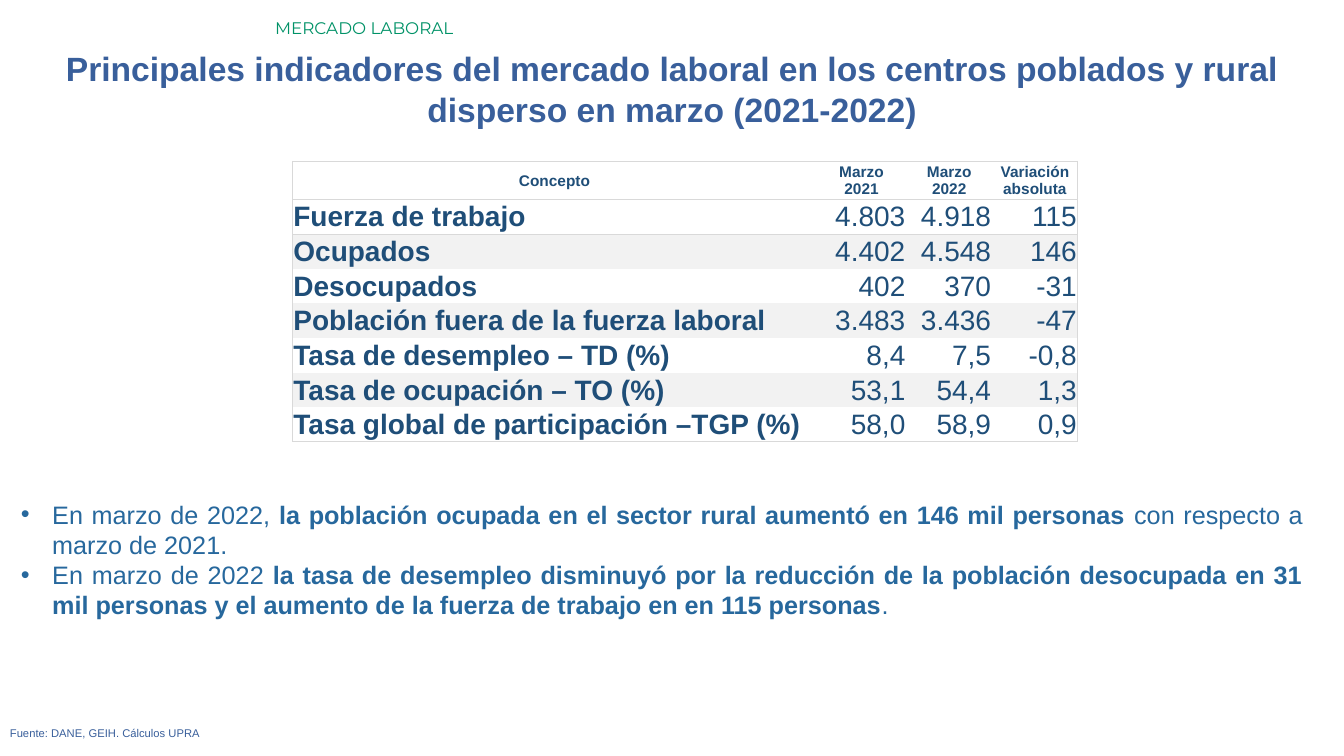
import pptx
import pptx.util
import pptx.dml.color
import pptx.enum.text
import pptx.oxml
import pptx.oxml.ns

WIDTH, HEIGHT = 13.33, 7.5
GREEN, BLUE, SKY, NAVY = "009267", "395F9B", "27689D", "1F4E78"
WHITE, BAND, BORDER = "FFFFFF", "F2F2F2", "D9D9D9"
ALIGN = pptx.enum.text.PP_ALIGN
ANCHOR = pptx.enum.text.MSO_ANCHOR

HEADINGS = ["Concepto", "Marzo\n2021", "Marzo\n2022", "Variación absoluta"]
INDICATORS = [
    ("Fuerza de trabajo", "4.803", "4.918", "115"),
    ("Ocupados", "4.402", "4.548", "146"),
    ("Desocupados", "402", "370", "-31"),
    ("Población fuera de la fuerza laboral", "3.483", "3.436", "-47"),
    ("Tasa de desempleo – TD (%)", "8,4", "7,5", "-0,8"),
    ("Tasa de ocupación – TO (%)", "53,1", "54,4", "1,3"),
    ("Tasa global de participación –TGP (%)", "58,0", "58,9", "0,9"),
]
FINDINGS = [
    [("En marzo de 2022, ", False),
     ("la población ocupada en el sector rural aumentó en 146 mil personas ", True),
     ("con respecto a marzo de 2021.", False)],
    [("En marzo de 2022", False),
     (" la tasa de desempleo disminuyó por la reducción de la población desocupada "
      "en 31 mil personas y el aumento de la fuerza de trabajo en en 115 personas", True),
     (".", False)],
]


def color(value):
    """Turn a hex string into a colour."""
    return pptx.dml.color.RGBColor.from_string(value)


def add_xml(parent, markup):
    """Append a DrawingML element to its parent."""
    namespace = pptx.oxml.ns.nsdecls("a")
    parent.append(pptx.oxml.parse_xml(markup.replace(" ", f" {namespace} ", 1)))


def write(para, text, size, shade, font="Arial", bold=False, align=ALIGN.LEFT):
    """Add a formatted run to a paragraph."""
    para.alignment = align
    span = para.add_run()
    span.text = text
    span.font.name, span.font.size, span.font.bold = font, pptx.util.Pt(size), bold
    span.font.color.rgb = color(shade)


class Page:
    """Holds the current slide and places elements by shares of its size."""

    def __init__(self, deck):
        """Open a title-only slide."""
        self.deck = deck
        self.slide = deck.slides.add_slide(deck.slide_layouts[5])

    def area(self, left, top, width, height):
        """Convert shares of the slide to lengths."""
        across, down = self.deck.slide_width, self.deck.slide_height
        return int(left * across), int(top * down), int(width * across), int(height * down)

    def title(self, text, place):
        """Place and format the title placeholder."""
        box = self.slide.shapes.title
        box.left, box.top, box.width, box.height = self.area(*place)
        box.text_frame.word_wrap = True
        box.text_frame.auto_size = pptx.enum.text.MSO_AUTO_SIZE.NONE
        box.text_frame.vertical_anchor = ANCHOR.TOP
        write(box.text_frame.paragraphs[0], text, 24, BLUE, bold=True, align=ALIGN.CENTER)

    def text(self, place):
        """Add a wrapping text box and return its frame."""
        frame = self.slide.shapes.add_textbox(*self.area(*place)).text_frame
        frame.word_wrap = True
        return frame

    def label(self, text, place, **style):
        """Add one line of text."""
        write(self.text(place).paragraphs[0], text, **style)

    def bullets(self, items, place):
        """Add a justified list with mixed bold runs."""
        frame = self.text(place)
        indent = pptx.util.Inches(0.31)
        for index, item in enumerate(items):
            para = frame.add_paragraph() if index else frame.paragraphs[0]
            properties = para._p.get_or_add_pPr()
            properties.set("marL", str(indent))
            properties.set("indent", str(-indent))
            add_xml(properties, '<a:buFont typeface="Arial"/>')
            add_xml(properties, '<a:buChar char="•"/>')
            for text, bold in item:
                write(para, text, 18, SKY, bold=bold, align=ALIGN.JUSTIFY)

    def table(self, rows, place, columns, heights):
        """Add a banded table with a thin outer frame."""
        grid = self.slide.shapes.add_table(len(rows), len(columns), *self.area(*place)).table
        for column, width in zip(grid.columns, columns):
            column.width = pptx.util.Inches(width)
        for row, height in zip(grid.rows, heights):
            row.height = pptx.util.Inches(height)
        last_row, last_column = len(rows) - 1, len(columns) - 1
        for down, values in enumerate(rows):
            for across, value in enumerate(values):
                edges = {"L": across == 0, "R": across == last_column,
                         "T": down <= 2, "B": down <= 1 or down == last_row}
                self.cell(grid.cell(down, across), value, down, across, edges)

    def cell(self, cell, value, down, across, edges):
        """Fill, frame and write one table cell."""
        cell.margin_left = cell.margin_right = cell.margin_top = pptx.util.Inches(0.01)
        cell.margin_bottom = 0
        cell.vertical_anchor = ANCHOR.MIDDLE
        for side, shown in edges.items():
            paint = f'<a:solidFill><a:srgbClr val="{BORDER}"/></a:solidFill>' if shown else "<a:noFill/>"
            add_xml(cell._tc.get_or_add_tcPr(), f'<a:ln{side} w="6350">{paint}</a:ln{side}>')
        cell.fill.solid()
        cell.fill.fore_color.rgb = color(BAND if down and down % 2 == 0 else WHITE)
        header = down == 0
        align = ALIGN.CENTER if header else ALIGN.RIGHT if across else ALIGN.LEFT
        for index, line in enumerate(value.split("\n")):
            para = cell.text_frame.add_paragraph() if index else cell.text_frame.paragraphs[0]
            write(para, line, 11 if header else 20, NAVY, bold=header or across == 0, align=align)


def main():
    """Build and save the slide."""
    deck = pptx.Presentation()
    deck.slide_width, deck.slide_height = pptx.util.Inches(WIDTH), pptx.util.Inches(HEIGHT)
    page = Page(deck)
    page.label("MERCADO LABORAL", (2.63 / WIDTH, 0.13 / HEIGHT, 10.7 / WIDTH, 0.04),
               size=12, shade=GREEN, font="Montserrat")
    page.title("Principales indicadores del mercado laboral en los centros poblados "
               "y rural disperso en marzo (2021-2022)", (0, 0.43 / HEIGHT, 1, 0.91 / HEIGHT))
    page.label("Fuente: DANE, GEIH. Cálculos UPRA", (0, 7.16 / HEIGHT, 12.91 / WIDTH, 0.24 / HEIGHT),
               size=8, shade=BLUE, align=ALIGN.JUSTIFY)
    page.bullets(FINDINGS, (0.11 / WIDTH, 4.9 / HEIGHT, 12.91 / WIDTH, 1.31 / HEIGHT))
    page.table([HEADINGS] + INDICATORS, (2.9 / WIDTH, 1.6 / HEIGHT, 7.79 / WIDTH, 2.78 / HEIGHT),
               [5.2, 0.89, 0.85, 0.85], [0.37] + [0.34] * len(INDICATORS))
    deck.save("out.pptx")


if __name__ == "__main__":
    main()
